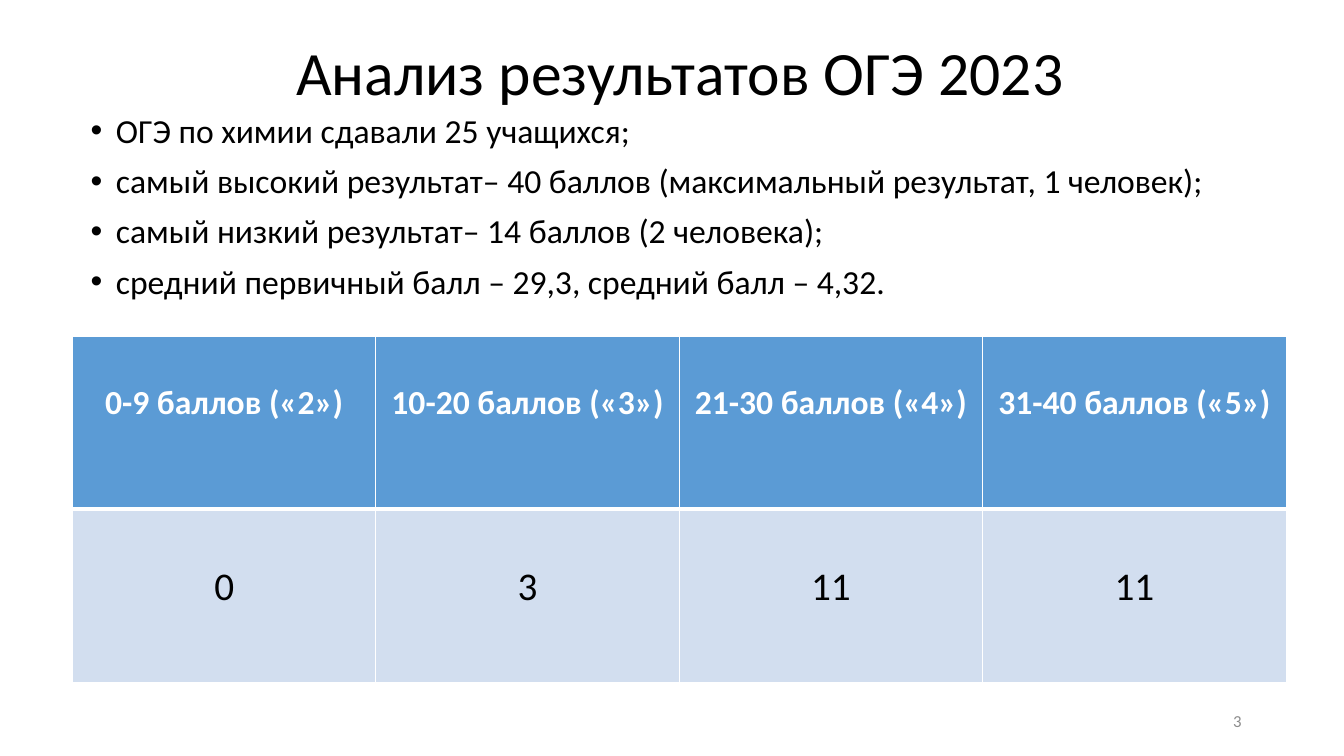
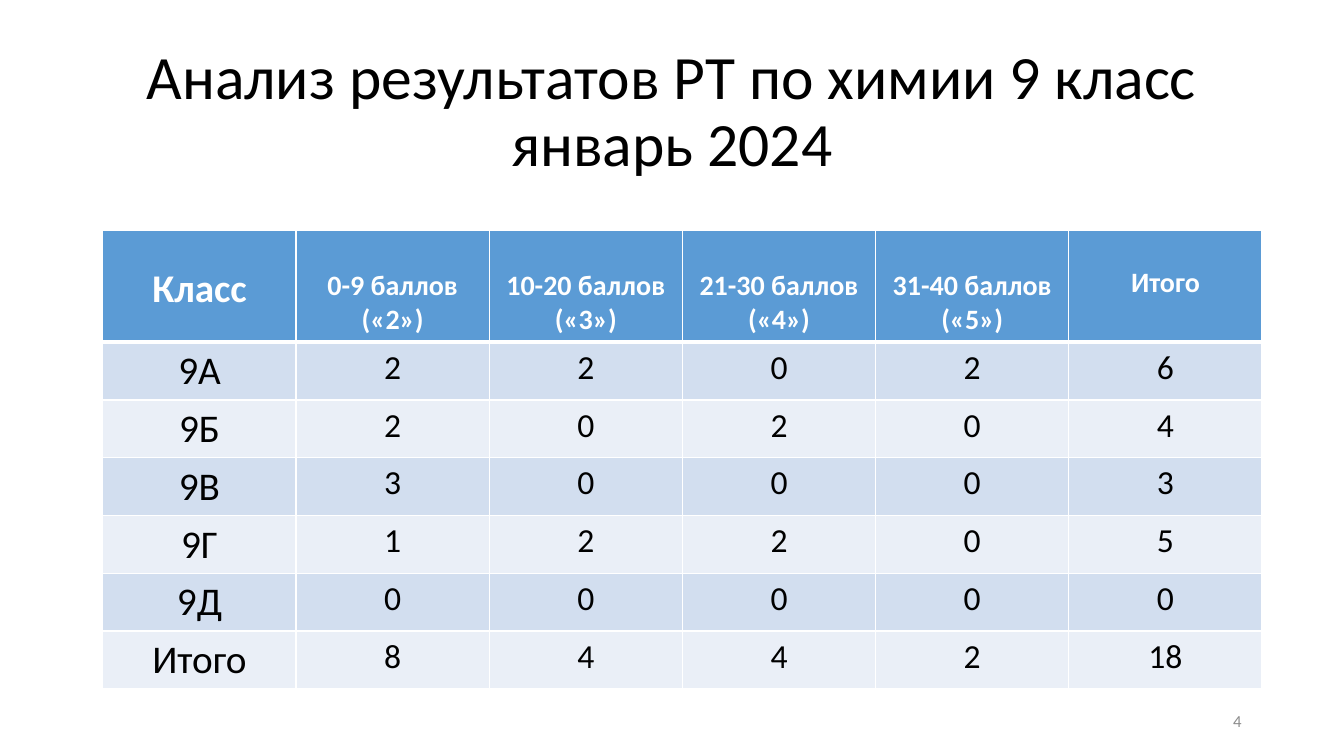
from dataclasses import dataclass

from lxml import etree
from pptx import Presentation
from pptx.dml.color import RGBColor
from pptx.enum.text import MSO_ANCHOR, PP_ALIGN
from pptx.oxml.ns import qn
from pptx.util import Emu, Pt

CENTER, RIGHT, JUSTIFY = PP_ALIGN.CENTER, PP_ALIGN.RIGHT, PP_ALIGN.JUSTIFY
TOP, MIDDLE = MSO_ANCHOR.TOP, MSO_ANCHOR.MIDDLE
EMU_PER_PX = 9525
TITLE_ONLY = 5


@dataclass(frozen=True)
class Theme:
    font: str = "Calibri"
    ink: str = "000000"
    white: str = "FFFFFF"
    muted: str = "8C8C8C"
    header: str = "5B9BD5"
    bands: tuple[str, str] = ("D2DEEF", "EAEFF7")
    title_size: int = 44
    large_size: int = 28
    body_size: int = 24
    small_size: int = 20
    number_size: int = 12
    line_spacing: float = 0.9
    thin_border: int = 1
    header_border: int = 3


@dataclass(frozen=True)
class Box:
    left: int
    top: int
    width: int
    height: int


@dataclass(frozen=True)
class CellStyle:
    size: int
    top_margin: int = 5


@dataclass(frozen=True)
class TableSpec:
    left: int
    top: int
    column_width: int
    header_height: int
    row_height: int
    rows: list[list[str]]
    header_styles: list[CellStyle]
    body_styles: list[CellStyle]


THEME = Theme()
SLIDE_WIDTH, SLIDE_HEIGHT = 1280, 720
NUMBER_BOX = Box(904, 667, 288, 38)
GRADES = ["0-9 баллов («2»)", "10-20 баллов («3»)", "21-30 баллов («4»)", "31-40 баллов («5»)"]

EXAM_FACTS = [
    "ОГЭ по химии сдавали 25 учащихся;",
    "самый высокий результат– 40 баллов (максимальный результат, 1 человек);",
    "самый низкий результат– 14 баллов (2 человека);",
    "средний первичный балл – 29,3, средний балл – 4,32.",
]

EXAM_TABLE = TableSpec(
    left=69, top=320, column_width=289, header_height=165, row_height=165,
    rows=[GRADES, ["0", "3", "11", "11"]],
    header_styles=[CellStyle(THEME.body_size, 44)] * 4,
    body_styles=[CellStyle(THEME.large_size, 51)] * 4,
)

CLASS_TABLE = TableSpec(
    left=98, top=219, column_width=184, header_height=107, row_height=55,
    rows=[
        ["Класс", *GRADES, "Итого"],
        ["9А", "2", "2", "0", "2", "6"],
        ["9Б", "2", "0", "2", "0", "4"],
        ["9В", "3", "0", "0", "0", "3"],
        ["9Г", "1", "2", "2", "0", "5"],
        ["9Д", "0", "0", "0", "0", "0"],
        ["Итого", "8", "4", "4", "2", "18"],
    ],
    header_styles=[
        CellStyle(THEME.large_size, 34),
        *[CellStyle(THEME.small_size, 37)] * 4,
        CellStyle(THEME.small_size, 34),
    ],
    body_styles=[CellStyle(THEME.large_size), *[CellStyle(THEME.body_size)] * 5],
)


def px(length: int) -> Emu:
    return Emu(length * EMU_PER_PX)


def corners(box: Box) -> tuple[Emu, Emu, Emu, Emu]:
    return px(box.left), px(box.top), px(box.width), px(box.height)


# Text
def add_bullet(paragraph) -> None:
    properties = paragraph._p.get_or_add_pPr()
    properties.set("marL", str(px(24)))
    properties.set("indent", str(px(-24)))
    etree.SubElement(properties, qn("a:buFont")).set("typeface", "Arial")
    etree.SubElement(properties, qn("a:buChar")).set("char", "•")


def write_text(text_frame, *lines: str, size: int, color: str = THEME.ink, bold: bool = False,
               align: PP_ALIGN = CENTER, anchor: MSO_ANCHOR = MIDDLE, line_spacing: float = 1.0,
               space_before: int = 0, bullets: bool = False) -> None:
    text_frame.word_wrap = True
    text_frame.vertical_anchor = anchor
    for index, line in enumerate(lines):
        paragraph = text_frame.add_paragraph() if index else text_frame.paragraphs[0]
        paragraph.alignment = align
        paragraph.line_spacing = line_spacing
        paragraph.space_before = Pt(space_before)
        if bullets:
            add_bullet(paragraph)
        run = paragraph.add_run()
        run.text = line
        run.font.name = THEME.font
        run.font.size = Pt(size)
        run.font.bold = bold
        run.font.color.rgb = RGBColor.from_string(color)


# Slide frame: title and number
def add_titled_slide(presentation, title: str, title_box: Box, number: int):
    slide = presentation.slides.add_slide(presentation.slide_layouts[TITLE_ONLY])
    placeholder = slide.shapes.title
    placeholder.left, placeholder.top, placeholder.width, placeholder.height = corners(title_box)
    write_text(placeholder.text_frame, title, size=THEME.title_size,
               line_spacing=THEME.line_spacing)
    number_shape = slide.shapes.add_textbox(*corners(NUMBER_BOX))
    write_text(number_shape.text_frame, str(number), size=THEME.number_size,
               color=THEME.muted, align=RIGHT)
    return slide


# Tables
def set_borders(cell, top: int, bottom: int) -> None:
    properties = cell._tc.get_or_add_tcPr()
    thin = THEME.thin_border
    for tag, width in (("a:lnL", thin), ("a:lnR", thin), ("a:lnT", top), ("a:lnB", bottom)):
        line = etree.SubElement(properties, qn(tag), w=str(Pt(width)))
        fill = etree.SubElement(line, qn("a:solidFill"))
        etree.SubElement(fill, qn("a:srgbClr"), val=THEME.white)


def add_score_table(slide, spec: TableSpec) -> None:
    row_count, column_count = len(spec.rows), len(spec.rows[0])
    box = Box(spec.left, spec.top, spec.column_width * column_count,
              spec.header_height + spec.row_height * (row_count - 1))
    table = slide.shapes.add_table(row_count, column_count, *corners(box)).table
    for column in table.columns:
        column.width = px(spec.column_width)
    for row_index, values in enumerate(spec.rows):
        is_header = row_index == 0
        table.rows[row_index].height = px(spec.header_height if is_header else spec.row_height)
        styles = spec.header_styles if is_header else spec.body_styles
        fill_color = THEME.header if is_header else THEME.bands[(row_index - 1) % 2]
        for column_index, (value, style) in enumerate(zip(values, styles)):
            cell = table.cell(row_index, column_index)
            set_borders(cell,
                        top=THEME.header_border if row_index == 1 else THEME.thin_border,
                        bottom=THEME.header_border if is_header else THEME.thin_border)
            cell.fill.solid()
            cell.fill.fore_color.rgb = RGBColor.from_string(fill_color)
            cell.margin_top = px(style.top_margin)
            cell.vertical_anchor = TOP
            write_text(cell.text_frame, value, size=style.size, bold=is_header, anchor=TOP,
                       color=THEME.white if is_header else THEME.ink)


# Slides
def build_exam_slide(presentation) -> None:
    slide = add_titled_slide(presentation, "Анализ результатов ОГЭ 2023", Box(96, 2, 1104, 139), 3)
    facts = slide.shapes.add_textbox(*corners(Box(77, 104, 1104, 205)))
    write_text(facts.text_frame, *EXAM_FACTS, size=THEME.body_size, align=JUSTIFY, anchor=TOP,
               line_spacing=THEME.line_spacing, space_before=10, bullets=True)
    add_score_table(slide, EXAM_TABLE)


def build_class_slide(presentation) -> None:
    slide = add_titled_slide(presentation, "Анализ результатов РТ по химии 9 класс январь 2024",
                             Box(88, 38, 1104, 139), 4)
    add_score_table(slide, CLASS_TABLE)


def main() -> None:
    presentation = Presentation()
    presentation.slide_width, presentation.slide_height = px(SLIDE_WIDTH), px(SLIDE_HEIGHT)
    build_exam_slide(presentation)
    build_class_slide(presentation)
    presentation.save("out.pptx")


if __name__ == "__main__":
    main()
